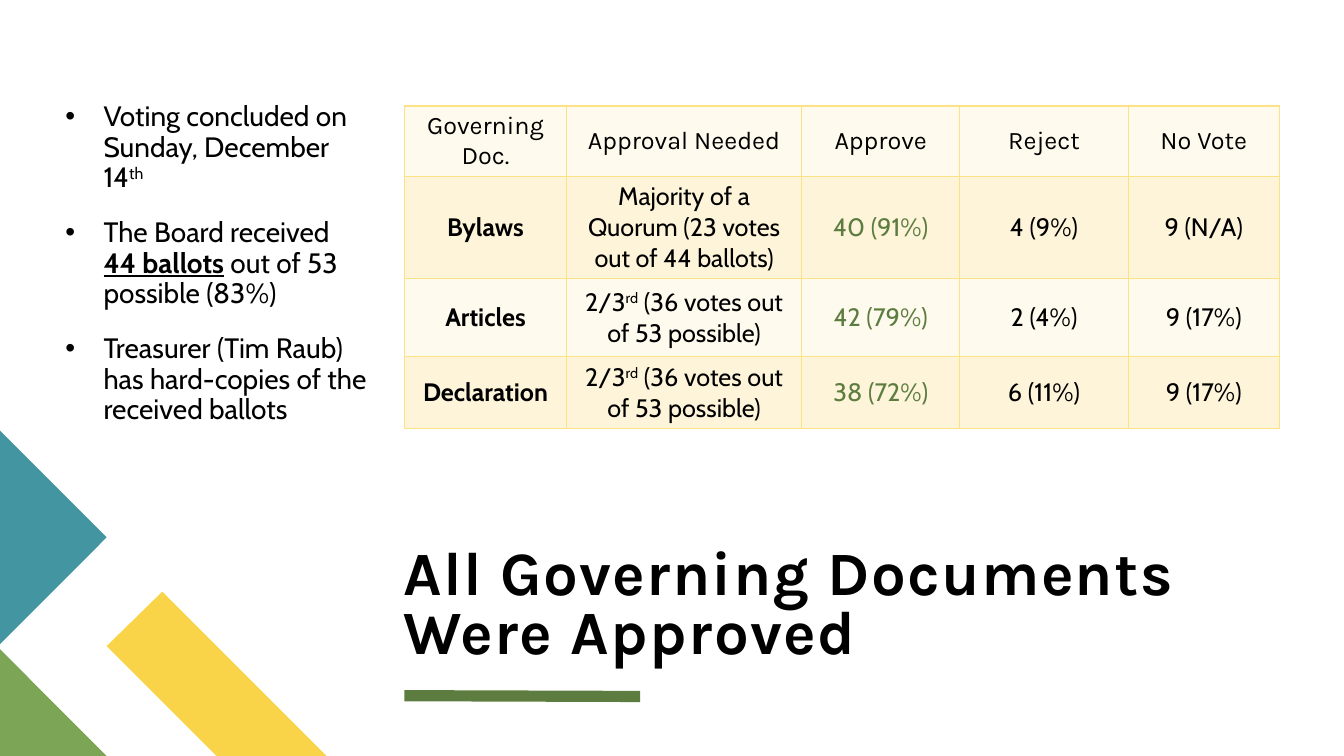
from lxml import etree
from pptx import Presentation
from pptx import util as u
from pptx.dml.color import RGBColor
from pptx.enum import shapes, text
from pptx.oxml import ns

BLACK = RGBColor(0x00, 0x00, 0x00)
TEAL = RGBColor(0x44, 0x95, 0xA2)
YELLOW = RGBColor(0xF9, 0xD4, 0x48)
LEAF = RGBColor(0x7C, 0xA6, 0x55)
GREEN = RGBColor(0x5D, 0x7D, 0x40)
GRID = RGBColor(0xFB, 0xE2, 0x84)
BANDS = (RGBColor(0xFE, 0xFA, 0xED), RGBColor(0xFD, 0xF4, 0xD9))

HEADING, BODY = "Karla", "Cabin"

# Corner decoration: outlines in centimetres
CORNER = (
    (YELLOW, [(8.23, 19.05), (5.46, 19.05), (2.69, 16.28), (4.09, 14.91)]),
    (LEAF, [(2.69, 19.05), (0, 19.05), (0, 16.36)]),
    (TEAL, [(0, 10.85), (2.69, 13.54), (0, 16.23)]),
)

# A paragraph is a list of (words, style) pieces
NOTES = (
    [("Voting concluded on Sunday, December 14", ""), ("th", "super")],
    [("The Board received ", ""), ("44 ballots", "strong"),
     (" out of 53 possible (83%)", "")],
    [("Treasurer (Tim Raub) has hard-copies of the received ballots", "")],
)

TWO_THIRDS = [("2/3", ""), ("rd", "super"), (" (36 votes out of 53 possible)", "")]
MAJORITY = [("Majority of a Quorum (23 votes out of 44 ballots)", "")]
VOTES = (
    ("Governing Doc.", "Approval Needed", "Approve", "Reject", "No Vote"),
    ("Bylaws", MAJORITY, "40 (91%)", "4 (9%)", "9 (N/A)"),
    ("Articles", TWO_THIRDS, "42 (79%)", "2 (4%)", "9 (17%)"),
    ("Declaration", TWO_THIRDS, "38 (72%)", "6 (11%)", "9 (17%)"),
)
COLUMN_WIDTHS = (4.09, 5.92, 3.99, 4.24, 3.81)
ROW_HEIGHTS = (1.76, 2.57, 1.97, 1.81)


def format_run(run, font, size, color=BLACK, bold=False):
    run.font.name = font
    run.font.size = u.Pt(size)
    run.font.color.rgb = color
    run.font.bold = bold


def write_pieces(paragraph, pieces, size):
    for words, style in pieces:
        run = paragraph.add_run()
        run.text = words
        format_run(run, BODY, size, bold=style == "strong")
        if style == "strong":
            run.font.underline = True
        if style == "super":
            run.font._element.set("baseline", "30000")


def add_bullet(paragraph):
    properties = paragraph._p.get_or_add_pPr()
    properties.set("marL", str(u.Cm(0.96)))
    properties.set("indent", str(-u.Cm(0.96)))
    font = etree.SubElement(properties, ns.qn("a:buFont"))
    font.set("typeface", "Arial")
    etree.SubElement(properties, ns.qn("a:buChar")).set("char", "•")


def add_corner_piece(slide, color, points):
    outline = [(u.Cm(x), u.Cm(y)) for x, y in points]
    builder = slide.shapes.build_freeform(*outline[0])
    builder.add_line_segments(outline[1:], close=True)
    piece = builder.convert_to_shape()
    piece.shadow.inherit = False
    piece.fill.solid()
    piece.fill.fore_color.rgb = color
    piece.line.fill.background()


def add_title_rule(slide):
    rule = slide.shapes.add_connector(
        shapes.MSO_CONNECTOR.STRAIGHT,
        u.Cm(10.19), u.Cm(17.53), u.Cm(16.13), u.Cm(17.55))
    rule.line.color.rgb = GREEN
    rule.line.width = u.Pt(8)
    etree.SubElement(rule._element.spPr, ns.qn("a:effectLst"))


def set_title(slide):
    title = slide.shapes.title
    title.left, title.top = u.Cm(10.16), u.Cm(12.95)
    title.width, title.height = u.Cm(22.05), u.Cm(3.84)
    frame = title.text_frame
    frame.text = "All Governing Documents Were Approved"
    frame.word_wrap = True
    frame.auto_size = text.MSO_AUTO_SIZE.NONE
    frame.vertical_anchor = text.MSO_ANCHOR.BOTTOM
    frame.margin_left = frame.margin_right = 0
    frame.margin_top = frame.margin_bottom = 0
    heading = frame.paragraphs[0]
    heading.alignment = text.PP_ALIGN.LEFT
    heading.line_spacing = 0.8
    format_run(heading.runs[0], HEADING, 44, bold=True)
    heading.runs[0].font._element.set("spc", "100")


def add_notes_list(slide):
    box = slide.shapes.add_textbox(u.Cm(1.65), u.Cm(1.83), u.Cm(7.85), u.Cm(11.1))
    frame = box.text_frame
    frame.word_wrap = True
    frame.margin_left, frame.margin_top = 0, u.Cm(0.76)
    for index, pieces in enumerate(NOTES):
        note = frame.add_paragraph() if index else frame.paragraphs[0]
        note.line_spacing = 0.9
        note.space_before = u.Pt(18)
        add_bullet(note)
        write_pieces(note, pieces, 20)


def add_borders(cell):
    properties = cell._tc.get_or_add_tcPr()
    for side in ("lnL", "lnR", "lnT", "lnB"):
        border = etree.SubElement(properties, ns.qn(f"a:{side}"))
        border.set("w", str(u.Pt(1)))
        fill = etree.SubElement(border, ns.qn("a:solidFill"))
        etree.SubElement(fill, ns.qn("a:srgbClr")).set("val", str(GRID))


def fill_cell(cell, content, row, column):
    add_borders(cell)
    cell.fill.solid()
    cell.fill.fore_color.rgb = BANDS[row % 2]
    cell.vertical_anchor = text.MSO_ANCHOR.MIDDLE
    paragraph = cell.text_frame.paragraphs[0]
    paragraph.alignment = text.PP_ALIGN.CENTER
    if isinstance(content, list):
        write_pieces(paragraph, content, 18)
        return
    paragraph.text = content
    is_body = row > 0
    format_run(paragraph.runs[0], BODY if is_body else HEADING, 18,
               color=GREEN if is_body and column == 2 else BLACK,
               bold=is_body and column == 0)


def add_votes_table(slide):
    votes = slide.shapes.add_table(
        len(VOTES), len(COLUMN_WIDTHS), u.Cm(10.19), u.Cm(2.67),
        u.Cm(sum(COLUMN_WIDTHS)), u.Cm(sum(ROW_HEIGHTS))).table
    for column, width in zip(votes.columns, COLUMN_WIDTHS):
        column.width = u.Cm(width)
    for row, height in zip(votes.rows, ROW_HEIGHTS):
        row.height = u.Cm(height)
    for row, contents in enumerate(VOTES):
        for column, content in enumerate(contents):
            fill_cell(votes.cell(row, column), content, row, column)


def main():
    deck = Presentation()
    deck.slide_width, deck.slide_height = u.Cm(33.87), u.Cm(19.05)
    slide = deck.slides.add_slide(deck.slide_layouts.get_by_name("Title Only"))

    # Decoration
    for color, points in CORNER:
        add_corner_piece(slide, color, points)
    add_title_rule(slide)

    # Content
    set_title(slide)
    add_notes_list(slide)
    add_votes_table(slide)

    deck.save("out.pptx")


if __name__ == "__main__":
    main()
